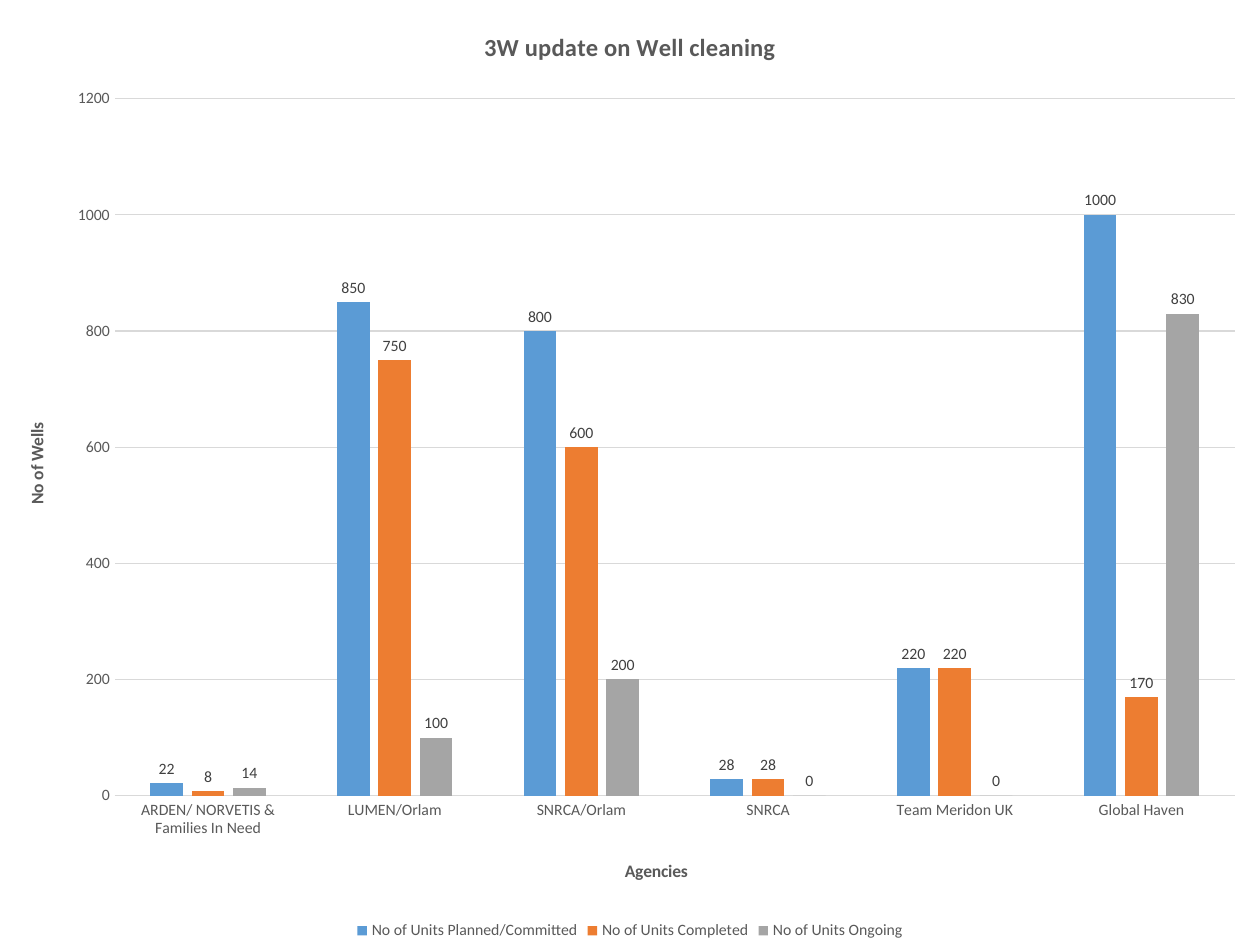
from pptx import Presentation
from pptx.chart.data import CategoryChartData
from pptx.dml.color import RGBColor
from pptx.enum import chart as ch
from pptx.util import Inches, Pt

HUES = {"text": "595959", "label": "404040", "line": "D9D9D9",
        "plan": "5B9BD5", "done": "ED7D31", "open": "A5A5A5"}


def style(font, size, hue="text", bold=False):
    form = {"name": "Calibri", "size": Pt(size), "bold": bold}
    for key, val in form.items():
        setattr(font, key, val)
    font.color.rgb = RGBColor.from_string(HUES[hue])


def head(part, words, size):
    part.has_title = True
    frame = (part.chart_title if hasattr(part, "chart_title")
             else part.axis_title).text_frame
    frame.text = words
    style(frame.paragraphs[0].runs[0].font, size, bold=True)


# Slide
deck = Presentation()
deck.slide_width, deck.slide_height = Inches(10), Inches(7.5)
slide = deck.slides.add_slide(deck.slide_layouts[6])

# Well counts by agency
wells = CategoryChartData()
wells.categories = ["ARDEN/ NORVETIS & Families In Need", "LUMEN/Orlam",
                    "SNRCA/Orlam", "SNRCA", "Team Meridon UK", "Global Haven"]
units = [
    ("No of Units Planned/Committed", "plan", (22, 850, 800, 28, 220, 1000)),
    ("No of Units Completed", "done", (8, 750, 600, 28, 220, 170)),
    ("No of Units Ongoing", "open", (14, 100, 200, 0, 0, 830)),
]
for name, hue, vals in units:
    wells.add_series(name, vals)
chart = slide.shapes.add_chart(
    ch.XL_CHART_TYPE.COLUMN_CLUSTERED, Inches(0), Inches(0),
    Inches(10), Inches(7.5), wells).chart
style(chart.font, 10)
head(chart, "3W update on Well cleaning", 14)
chart.chart_title.include_in_layout = False

# Axes
cat, val = chart.category_axis, chart.value_axis
for axis, words in ((cat, "Agencies"), (val, "No of Wells")):
    head(axis, words, 10)
    style(axis.tick_labels.font, 9)
    axis.major_tick_mark = axis.minor_tick_mark = ch.XL_TICK_MARK.NONE
val.minimum_scale, val.maximum_scale, val.major_unit = 0, 1200, 200
val.format.line.fill.background()
val.has_major_gridlines = True
for part in (cat, val.major_gridlines):
    part.format.line.width = Pt(0.75)
    part.format.line.color.rgb = RGBColor.from_string(HUES["line"])

# Bars and their values
plot = chart.plots[0]
plot.gap_width, plot.overlap, plot.vary_by_categories = 219, -27, False
for bars, (name, hue, vals) in zip(plot.series, units):
    bars.format.fill.solid()
    bars.format.fill.fore_color.rgb = RGBColor.from_string(HUES[hue])
    bars.invert_if_negative = False
    tags = bars.data_labels
    tags.show_value = True
    tags.position = ch.XL_LABEL_POSITION.OUTSIDE_END
    style(tags.font, 9, "label")

# Legend
chart.has_legend = True
chart.legend.position = ch.XL_LEGEND_POSITION.BOTTOM
chart.legend.include_in_layout = False
style(chart.legend.font, 9)

deck.save("out.pptx")
